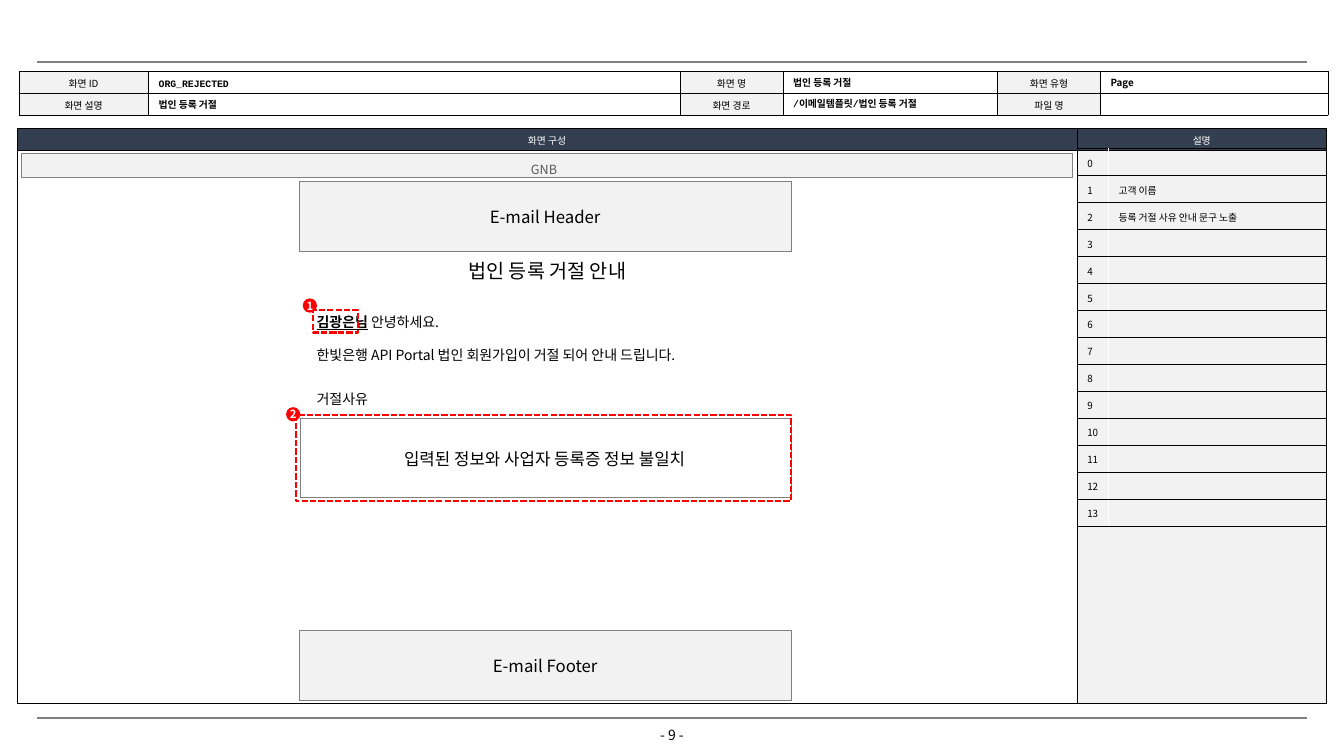
from lxml.etree import SubElement
from pptx import Presentation
from pptx.dml.color import RGBColor
from pptx.enum.dml import MSO_LINE as Dash
from pptx.enum.shapes import MSO_CONNECTOR as Connector, MSO_SHAPE as Shape
from pptx.enum.text import MSO_ANCHOR as Anchor, MSO_AUTO_SIZE as AutoSize, PP_ALIGN as Align
from pptx.oxml import parse_xml
from pptx.oxml.ns import nsdecls, qn
from pptx.util import Cm, Pt

# Content
FONT, MONO = "Noto Sans CJK KR", "Courier New"
BLACK, WHITE, GRAY, PALE, NAVY, RED = "000000", "FFFFFF", "808080", "F2F2F2", "333F50", "FF0000"
INFO_LABELS = [
    ["화면 ID", "", "화면 명", "", "화면 유형", ""],
    ["화면 설명", "", "화면 경로", "", "파일 명", ""],
]
INFO_VALUES = [  # text, font, left, top, width, height in cm
    ("ORG_REJECTED", MONO, (3.75, 1.8, 13.31, 0.6)),
    ("법인 등록 거절", FONT, (3.75, 2.36, 13.34, 0.56)),
    ("법인 등록 거절", FONT, (19.74, 1.8, 5.41, 0.54)),
    ("/이메일템플릿/법인 등록 거절", MONO, (19.74, 2.33, 5.41, 0.57)),
    ("Page", FONT, (27.74, 1.8, 5.74, 0.54)),
]
FRAME = [["화면 구성", "설명"], ["", ""]]
DESCRIPTIONS = {1: "고객 이름", 2: "등록 거절 사유 안내 문구 노출"}
DESCRIPTION_COUNT = 14
MAIL_TITLE = "법인 등록 거절 안내"
CUSTOMER, GREETING = "김광은님", " 안녕하세요."
NOTICE = "한빛은행 API Portal 법인 회원가입이 거절 되어 안내 드립니다."
REASON_LABEL = "거절사유"
REASON = "입력된 정보와 사업자 등록증 정보 불일치"
PAGE_NUMBER = "- 9 -"

# Places in cm: left, top, width, height
RULE_LEFT, RULE_WIDTH, TOP_RULE, BOTTOM_RULE = 0.94, 32, 1.57, 18.1
MAIL_BLOCKS = [("E-mail Header", 4.57), ("E-mail Footer", 15.88)]
MAIL_LEFT, MAIL_WIDTH, MAIL_BLOCK_HEIGHT = 7.54, 12.4, 1.77
TEXT_LEFT, TEXT_WIDTH = 7.73, 13.21
BADGE = 0.36
CALLOUTS = [  # number, marked area, badge position
    ("2", (7.45, 10.46, 12.49, 2.17), (7.21, 10.26)),
    ("1", (7.89, 7.82, 1.14, 0.56), (7.63, 7.52)),
]

prs = Presentation()
prs.slide_width, prs.slide_height = Cm(33.87), Cm(19.05)
slide = prs.slides.add_slide(prs.slide_layouts[5])
shapes = slide.shapes


def rgb(value):
    return RGBColor.from_string(value)


def style(paragraph, size, color=BLACK, bold=False, align=Align.LEFT, name=FONT):
    paragraph.alignment = align
    font = paragraph.font
    font.size, font.bold, font.color.rgb, font.name = Pt(size), bold, rgb(color), name
    defaults = paragraph._p.pPr.find(qn("a:defRPr"))
    defaults.set("kern", "0")
    SubElement(defaults, qn("a:ea")).set("typeface", FONT)


def set_margins(target, left=0.0, top=0.0, bottom=0.0):
    target.margin_left = target.margin_right = Cm(left)
    target.margin_top, target.margin_bottom = Cm(top), Cm(bottom)


def add_box(kind, place, fill=None, line=None, width=0.75):
    box = shapes.add_shape(kind, *map(Cm, place))
    box.shadow.inherit = False
    if fill:
        box.fill.solid()
        box.fill.fore_color.rgb = rgb(fill)
    else:
        box.fill.background()
    if line:
        box.line.color.rgb, box.line.width = rgb(line), Pt(width)
    else:
        box.line.fill.background()
    return box


def write(box, text, size, wrap=True, align=Align.CENTER, **font):
    frame = box.text_frame
    frame.word_wrap, frame.vertical_anchor = wrap, Anchor.MIDDLE
    frame.text = text
    style(frame.paragraphs[0], size, align=align, **font)
    return frame


def set_borders(cell, borders):
    """borders maps a side (L, R, T, B) to colour and points."""
    properties = cell._tc.get_or_add_tcPr()
    for side in "LRTB":
        color, width = borders.get(side, (None, 0))
        paint = f'<a:solidFill><a:srgbClr val="{color}"/></a:solidFill>' if color else "<a:noFill/>"
        properties.append(parse_xml(f'<a:ln{side} {nsdecls("a")} w="{Pt(width)}">{paint}</a:ln{side}>'))


def add_table(left, top, widths, heights, rows, look):
    """look(row, column) gives borders, fill, margins and text style."""
    place = map(Cm, (left, top, sum(widths), sum(heights)))
    table = shapes.add_table(len(rows), len(widths), *place).table
    table.first_row = table.horz_banding = False
    for column, width in zip(table.columns, widths):
        column.width = Cm(width)
    for r, (texts, height) in enumerate(zip(rows, heights)):
        table.rows[r].height = Cm(height)
        for c, text in enumerate(texts):
            cell, (borders, fill, margins, font) = table.cell(r, c), look(r, c)
            set_borders(cell, borders)
            if fill:
                cell.fill.solid()
                cell.fill.fore_color.rgb = rgb(fill)
            else:
                cell.fill.background()
            set_margins(cell, *margins)
            cell.vertical_anchor = Anchor.MIDDLE
            cell.text = text
            style(cell.text_frame.paragraphs[0], **font)
    return table


def all_sides(color, width):
    return dict.fromkeys("LRTB", (color, width))


def rule_look(row, column):
    return {"T": (GRAY, 1.5)}, None, (0.25, 0.12, 0.12), dict(size=18)


def frame_look(row, column):
    fill = NAVY if row == 0 else PALE if column else None
    return all_sides(BLACK, 0.25), fill, (0.3, 0.05), dict(size=7, color=WHITE, align=Align.CENTER)


def info_look(row, column):
    fill = None if column % 2 else PALE
    return all_sides(BLACK, 0.25), fill, (0.3, 0.05), dict(size=7, align=Align.CENTER)


def description_look(row, column):
    borders = {"T": (BLACK, 0.25), "B": (BLACK, 0.25), "RL"[column]: (WHITE, 0.5)}
    return borders, None, (0.25, 0.12, 0.12), dict(size=7)


def mail_look(row, column):
    return all_sides(GRAY, 0.5), PALE, (0.23, 0.18, 0.18), dict(size=12, align=Align.CENTER)


# Page rules and number
top_rule = shapes.add_connector(Connector.STRAIGHT, Cm(RULE_LEFT), Cm(TOP_RULE),
                                Cm(RULE_LEFT + RULE_WIDTH), Cm(TOP_RULE))
top_rule.line.color.rgb, top_rule.line.width = rgb(GRAY), Pt(1.5)
SubElement(top_rule._element.spPr, qn("a:effectLst"))
add_table(RULE_LEFT, BOTTOM_RULE, [RULE_WIDTH / 2] * 2, [0.53], [["", ""]], rule_look)
page = shapes.add_textbox(Cm(15.55), Cm(18.31), Cm(2.77), Cm(0.43))
set_margins(write(page, PAGE_NUMBER, 10))

# Screen frame and screen information
add_table(0.43, 3.23, (26.71, 6.29), (0.56, 13.94), FRAME, frame_look)
add_table(0.48, 1.8, (3.25, 13.41, 2.59, 5.41, 2.59, 5.74), (0.55, 0.55), INFO_LABELS, info_look)
for value, value_font, place in INFO_VALUES:
    value_box = shapes.add_textbox(*map(Cm, place))
    value_frame = write(value_box, value, 7, align=Align.JUSTIFY, bold=True, name=value_font)
    set_margins(value_frame, 0.25)

# Descriptions
description_rows = [[str(n), DESCRIPTIONS.get(n, "")] for n in range(DESCRIPTION_COUNT)]
descriptions = add_table(27.15, 3.73, (0.79, 5.49), [0.68] * DESCRIPTION_COUNT,
                         description_rows, description_look)
for description_cell in descriptions.iter_cells():
    description_cell.text_frame.paragraphs[0].line_spacing = Pt(12)

# Navigation bar
bar = add_box(Shape.RECTANGLE, (0.54, 3.86, 26.49, 0.61), PALE, GRAY)
bar_frame = write(bar, "GNB", 9, color="595959")
bar_frame.margin_left = Cm(0.1)
bar_frame.paragraphs[0].line_spacing = 1.5

# Mail title and blocks
title = shapes.title
title.left, title.top, title.width, title.height = map(Cm, (11.28, 6.4, 5.03, 0.86))
title_frame = write(title, MAIL_TITLE, 14, wrap=False)
title_frame.auto_size = AutoSize.NONE
for block, block_top in MAIL_BLOCKS:
    add_table(MAIL_LEFT, block_top, [MAIL_WIDTH], [MAIL_BLOCK_HEIGHT], [[block]], mail_look)

# Mail text
intro = shapes.add_textbox(Cm(TEXT_LEFT), Cm(7.77), Cm(TEXT_WIDTH), Cm(1.55)).text_frame
intro.word_wrap = True
greeting, notice = intro.paragraphs[0], intro.add_paragraph()
customer = greeting.add_run()
customer.text = CUSTOMER
customer.font.bold = customer.font.underline = True
greeting.add_run().text = GREETING
notice.text = NOTICE
notice.space_before = Pt(12)
reason_label = shapes.add_textbox(Cm(TEXT_LEFT), Cm(9.72), Cm(TEXT_WIDTH), Cm(0.69)).text_frame
reason_label.word_wrap = True
reason_label.text = REASON_LABEL
for paragraph in (greeting, notice, reason_label.paragraphs[0]):
    style(paragraph, 10)
add_box(Shape.RECTANGLE, (7.57, 10.54, 12.37, 2), WHITE, GRAY, 0.25)
write(shapes.add_textbox(Cm(8.13), Cm(11.18), Cm(11.2), Cm(0.76)), REASON, 12)

# Numbered callouts
for number, area, corner in CALLOUTS:
    add_box(Shape.RECTANGLE, area, line=RED, width=1.5).line.dash_style = Dash.SQUARE_DOT
    badge = add_box(Shape.OVAL, (*corner, BADGE, BADGE), RED)
    set_margins(write(badge, number, 8, wrap=False, color=WHITE, bold=True))

prs.save("out.pptx")
